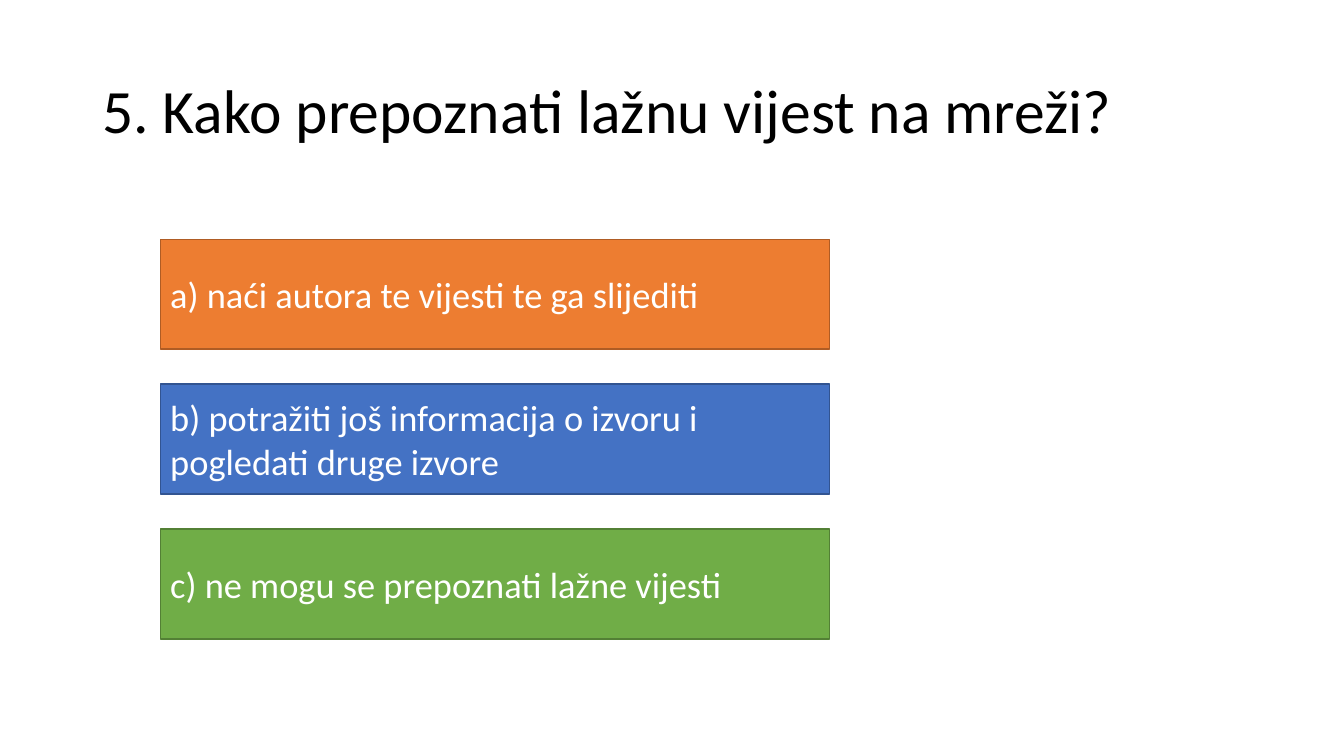
from pptx import Presentation
from pptx.dml.color import RGBColor
from pptx.enum import shapes, text
from pptx.util import Cm, Pt

BLACK = RGBColor(0x00, 0x00, 0x00)
WHITE = RGBColor(0xFF, 0xFF, 0xFF)
ORANGE = RGBColor(0xED, 0x7D, 0x31)
DARK_ORANGE = RGBColor(0xAF, 0x5C, 0x24)
BLUE = RGBColor(0x44, 0x72, 0xC4)
DARK_BLUE = RGBColor(0x32, 0x54, 0x91)
GREEN = RGBColor(0x70, 0xAD, 0x47)
DARK_GREEN = RGBColor(0x53, 0x80, 0x35)

QUESTION = "5. Kako prepoznati lažnu vijest na mreži?"
ANSWERS = [
    ("a) naći autora te vijesti te ga slijediti", ORANGE, DARK_ORANGE),
    ("b) potražiti još informacija o izvoru i pogledati druge izvore", BLUE, DARK_BLUE),
    ("c) ne mogu se prepoznati lažne vijesti", GREEN, DARK_GREEN),
]

ANSWER_LEFT, ANSWER_TOP = 4.04, 6.03
ANSWER_WIDTH, ANSWER_HEIGHT = 16.87, 2.77
ANSWER_STEP = 3.65


def write(shape, words, size, color):
    frame = shape.text_frame
    frame.text = words
    frame.word_wrap = True
    frame.vertical_anchor = text.MSO_ANCHOR.MIDDLE
    para = frame.paragraphs[0]
    para.alignment = text.PP_ALIGN.LEFT
    font = para.runs[0].font
    font.name = "Calibri"
    font.size = Pt(size)
    font.color.rgb = color
    return para


deck = Presentation()
deck.slide_width, deck.slide_height = Cm(33.87), Cm(19.05)
page = deck.slides.add_slide(deck.slide_layouts[6])

title = page.shapes.add_textbox(Cm(2.33), Cm(1.01), Cm(29.21), Cm(3.68))
write(title, QUESTION, 44, BLACK).line_spacing = 0.9

for index, (answer, fill, outline) in enumerate(ANSWERS):
    box = page.shapes.add_shape(
        shapes.MSO_SHAPE.RECTANGLE,
        Cm(ANSWER_LEFT), Cm(ANSWER_TOP + index * ANSWER_STEP),
        Cm(ANSWER_WIDTH), Cm(ANSWER_HEIGHT),
    )
    box.shadow.inherit = False
    box.fill.solid()
    box.fill.fore_color.rgb = fill
    box.line.color.rgb = outline
    box.line.width = Pt(1)
    write(box, answer, 26, WHITE)

deck.save("out.pptx")
